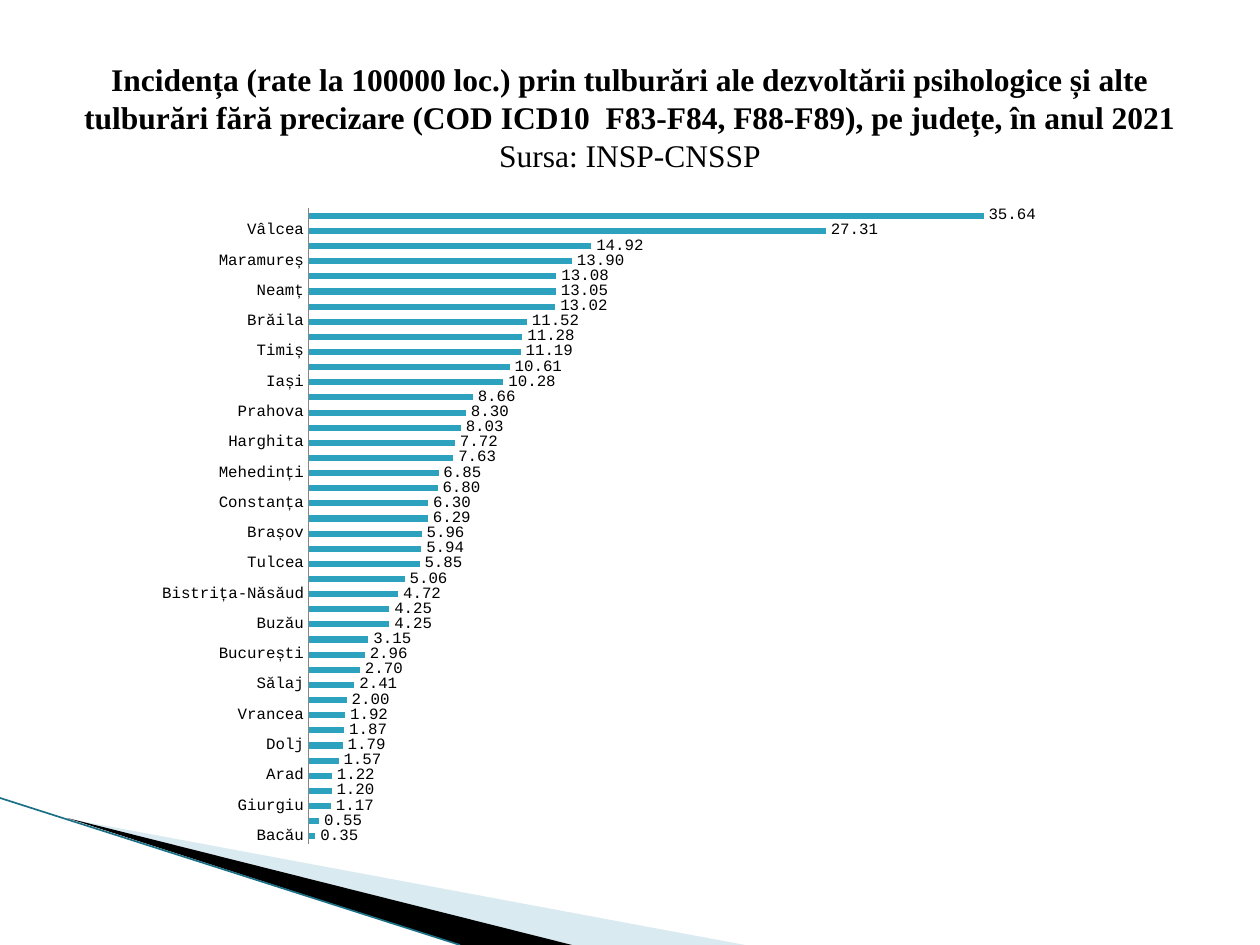
import pptx
import pptx.chart.data
import pptx.dml.color
import pptx.enum.chart
import pptx.enum.shapes
import pptx.enum.text
import pptx.oxml
import pptx.oxml.ns
import pptx.util

SCALE = 914400 / 126  # EMU in one px

RATES = [
    ("Bacău", 0.35), ("Vaslui", 0.55), ("Giurgiu", 1.17), ("Ialomița", 1.2),
    ("Arad", 1.22), ("Teleorman", 1.57), ("Dolj", 1.79), ("Dâmbovița", 1.87),
    ("Vrancea", 1.92), ("Sibiu", 2), ("Sălaj", 2.41), ("Bihor", 2.7),
    ("București", 2.96), ("Olt", 3.15), ("Buzău", 4.25), ("Argeș", 4.25),
    ("Bistrița-Năsăud", 4.72), ("Cluj", 5.06), ("Tulcea", 5.85),
    ("Hunedoara", 5.94), ("Brașov", 5.96), ("Galați", 6.29),
    ("Constanța", 6.3), ("Suceava", 6.8), ("Mehedinți", 6.85),
    ("Satu-Mare", 7.63), ("Harghita", 7.72), ("Covasna", 8.03),
    ("Prahova", 8.3), ("Ilfov", 8.66), ("Iași", 10.28),
    ("Caraș-Severin", 10.61), ("Timiș", 11.19), ("Alba", 11.28),
    ("Brăila", 11.52), ("Botoșani", 13.02), ("Neamț", 13.05),
    ("Mureș", 13.08), ("Maramureș", 13.9), ("Călărași", 14.92),
    ("Vâlcea", 27.31), ("Gorj", 35.64),
]


def px(length):
    return pptx.util.Emu(round(length * SCALE))


def color(value):
    return pptx.dml.color.RGBColor.from_string(value)


def set_font(font, name, size, bold=False):
    font.name = name
    font.size = pptx.util.Pt(size)
    font.bold = bold
    font.color.rgb = color("000000")


def add_wedge(slide, left, top, points, fill, alpha=100):
    outline = [(left + x, top + y) for x, y in points]
    builder = slide.shapes.build_freeform(*outline[0], scale=SCALE)
    builder.add_line_segments(outline[1:], close=True)
    wedge = builder.convert_to_shape()
    wedge.shadow.inherit = False
    wedge.fill.solid()
    wedge.fill.fore_color.rgb = color(fill)
    wedge.line.fill.background()
    if alpha < 100:
        tint = wedge.fill._xPr.find(".//" + pptx.oxml.ns.qn("a:srgbClr"))
        tint.append(pptx.oxml.parse_xml(
            f'<a:alpha {pptx.oxml.ns.nsdecls("a")} val="{alpha * 1000}"/>'))


def add_corner(slide, left, top, width, height):
    # Pale and black wedges, running off the bottom edge
    add_wedge(slide, left, top, [(69, 21), (width, height), (572, height)], "A0CBDC", 40)
    add_wedge(slide, left, top, [(67, 20), (572, height), (460, height)], "000000")
    # Edge line
    edge = slide.shapes.add_connector(
        pptx.enum.shapes.MSO_CONNECTOR.STRAIGHT,
        px(left), px(top), px(left + 460), px(top + height))
    edge.line.color.rgb = color("1B7086")
    edge.line.width = pptx.util.Pt(0.95)
    edge._element.spPr.append(pptx.oxml.parse_xml(
        f'<a:effectLst {pptx.oxml.ns.nsdecls("a")}/>'))


def add_heading(slide, left, top, width, height):
    heading = slide.shapes.title
    heading.left, heading.top = px(left), px(top)
    heading.width, heading.height = px(width), px(height)
    frame = heading.text_frame
    frame.word_wrap = True
    frame.auto_size = pptx.enum.text.MSO_AUTO_SIZE.NONE
    frame.vertical_anchor = pptx.enum.text.MSO_ANCHOR.MIDDLE
    paragraph = frame.paragraphs[0]
    paragraph.alignment = pptx.enum.text.PP_ALIGN.CENTER
    subject = paragraph.add_run()
    subject.text = (
        "Incidența (rate la 100000 loc.) prin tulburări ale dezvoltării "
        "psihologice și alte tulburări fără precizare (COD ICD10  F83-F84, "
        "F88-F89), pe județe, în anul 2021")
    set_font(subject.font, "Times New Roman", 18, bold=True)
    paragraph.add_line_break()
    source = paragraph.add_run()
    source.text = "Sursa: INSP-CNSSP"
    set_font(source.font, "Times New Roman", 18)


def add_rates(slide, left, top, width, height):
    rates = pptx.chart.data.CategoryChartData(number_format="0.00")
    rates.categories = [county for county, rate in RATES]
    rates.add_series("Series 1", [rate for county, rate in RATES])
    chart = slide.shapes.add_chart(
        pptx.enum.chart.XL_CHART_TYPE.BAR_CLUSTERED,
        px(left), px(top), px(width), px(height), rates).chart
    chart.has_legend = False
    chart.has_title = False
    set_font(chart.font, "Courier New", 10)

    # Bars and their values
    plot = chart.plots[0]
    plot.gap_width = 150
    plot.vary_by_categories = False
    bars = plot.series[0]
    bars.format.fill.solid()
    bars.format.fill.fore_color.rgb = color("2DA2BF")
    plot.has_data_labels = True
    labels = plot.data_labels
    labels.show_value = True
    labels.number_format = "0.00"
    labels.number_format_is_linked = False
    labels.position = pptx.enum.chart.XL_LABEL_POSITION.OUTSIDE_END
    set_font(labels.font, "Courier New", 9)

    # Axes: every second county is named
    counties = chart.category_axis
    counties.major_tick_mark = pptx.enum.chart.XL_TICK_MARK.NONE
    counties.has_major_gridlines = False
    counties.format.line.color.rgb = color("868686")
    set_font(counties.tick_labels.font, "Courier New", 9)
    counties._element.find(pptx.oxml.ns.qn("c:noMultiLvlLbl")).addprevious(
        pptx.oxml.parse_xml(
            f'<c:tickLblSkip {pptx.oxml.ns.nsdecls("c")} val="2"/>'))
    scale = chart.value_axis
    scale.minimum_scale, scale.maximum_scale = 0, 40
    scale.has_major_gridlines = False
    scale.visible = False

    # Plot area within the chart
    area = chart._chartSpace.chart.plotArea
    for layout in area.findall(pptx.oxml.ns.qn("c:layout")):
        area.remove(layout)
    share = {"x": 0.175, "y": 0.02, "w": 0.804, "h": 0.956}
    places = "".join(f'<c:{key} val="{part}"/>' for key, part in share.items())
    area.insert(0, pptx.oxml.parse_xml(
        f'<c:layout {pptx.oxml.ns.nsdecls("c")}><c:manualLayout>'
        '<c:layoutTarget val="inner"/><c:xMode val="edge"/><c:yMode val="edge"/>'
        f'{places}</c:manualLayout></c:layout>'))


def main():
    deck = pptx.Presentation()
    deck.slide_width, deck.slide_height = px(1260), px(945)
    slide = deck.slides.add_slide(deck.slide_layouts[5])
    add_corner(slide, 0, 798, 745, 147)
    add_heading(slide, 63, 38, 1134, 158)
    add_rates(slide, 144, 195, 942, 665)
    deck.save("out.pptx")


if __name__ == "__main__":
    main()
